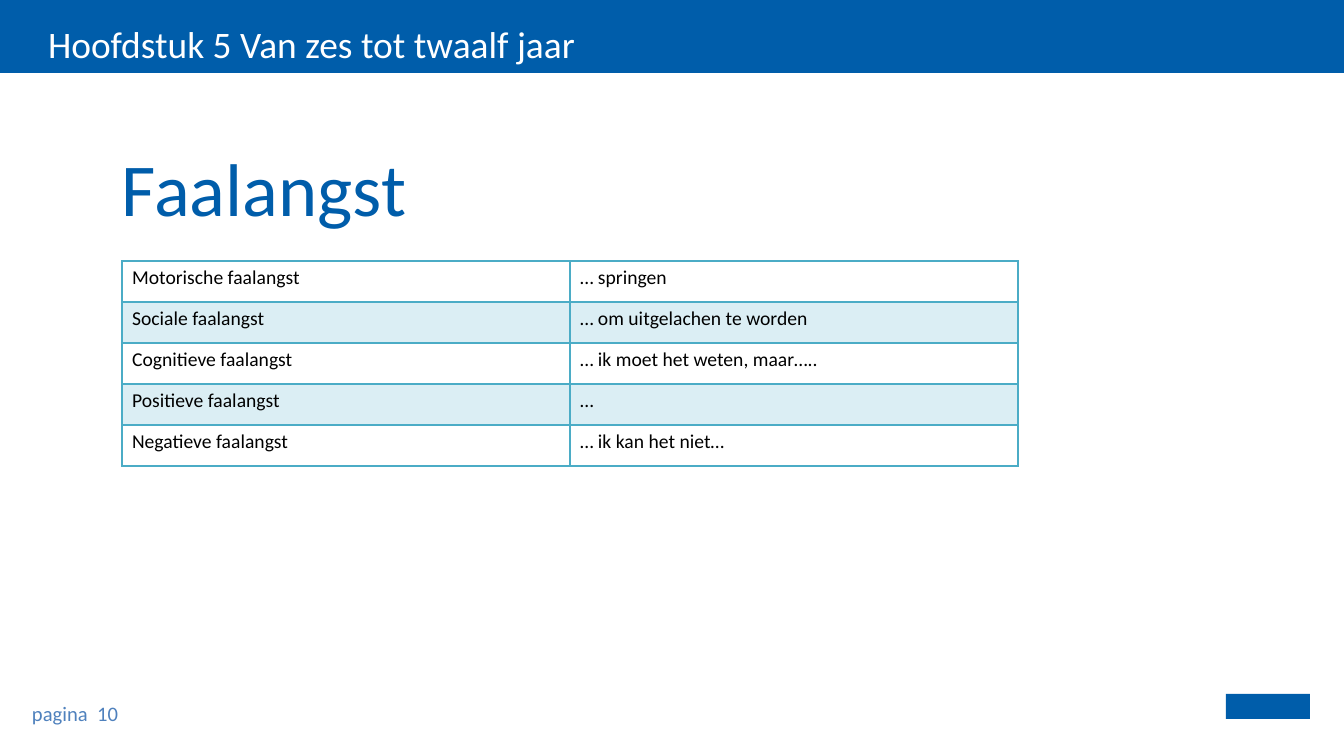
from lxml.etree import SubElement
from pptx import Presentation
from pptx.dml.color import RGBColor
from pptx.enum.shapes import MSO_SHAPE
from pptx.enum.text import MSO_ANCHOR, MSO_AUTO_SIZE, PP_ALIGN
from pptx.oxml.ns import qn
from pptx.util import Emu, Pt

BLUE = RGBColor(0x00, 0x5D, 0xAA)
PAGE_BLUE = RGBColor(0x4F, 0x81, 0xBD)
TEAL = RGBColor(0x4B, 0xAC, 0xC6)
PALE_TEAL = RGBColor(0xDB, 0xEE, 0xF4)
WHITE = RGBColor(0xFF, 0xFF, 0xFF)
BLACK = RGBColor(0x00, 0x00, 0x00)
FONT = "Calibri"

ANXIETY_TYPES = [
    ("Motorische faalangst", "… springen"),
    ("Sociale faalangst", "… om uitgelachen te worden"),
    ("Cognitieve faalangst", "… ik moet het weten, maar….."),
    ("Positieve faalangst", "…"),
    ("Negatieve faalangst", "… ik kan het niet…"),
]
COLUMN_WIDTH = 448
ROW_HEIGHT = 41


def px(length):
    return Emu(round(length * 914400 / 100.8))


def style_paragraph(para, size, color):
    para.alignment = PP_ALIGN.LEFT
    para.font.name = FONT
    para.font.size = Pt(size)
    para.font.color.rgb = color


def fill_text_box(box, text, size, color, anchor=MSO_ANCHOR.TOP, spacing=1.08):
    frame = box.text_frame
    frame.word_wrap = True
    frame.auto_size = MSO_AUTO_SIZE.NONE
    frame.vertical_anchor = anchor
    frame.margin_left = frame.margin_right = 0
    frame.margin_top = frame.margin_bottom = 0
    frame.text = text
    para = frame.paragraphs[0]
    para.line_spacing = spacing
    style_paragraph(para, size, color)


def add_text(page, left, top, width, height, *text_style, **layout):
    box = page.shapes.add_textbox(px(left), px(top), px(width), px(height))
    fill_text_box(box, *text_style, **layout)


def add_block(page, left, top, width, height):
    block = page.shapes.add_shape(
        MSO_SHAPE.RECTANGLE, px(left), px(top), px(width), px(height))
    block.shadow.inherit = False
    block.fill.solid()
    block.fill.fore_color.rgb = BLUE
    block.line.fill.background()


def add_title(page, left, top, width, height, text):
    title = page.shapes.title
    title.left, title.top = px(left), px(top)
    title.width, title.height = px(width), px(height)
    fill_text_box(title, text, 53.3, BLUE)


def set_borders(cell, widths):
    """Draw the left, right, top and bottom borders, with widths in points."""
    properties = cell._tc.get_or_add_tcPr()
    for side, width in zip("LRTB", widths):
        line = SubElement(properties, qn(f"a:ln{side}"), w=str(Pt(width)))
        solid = SubElement(line, qn("a:solidFill"))
        SubElement(solid, qn("a:srgbClr"), val=str(TEAL))


def add_anxiety_table(page, left, top):
    rows, columns = len(ANXIETY_TYPES), len(ANXIETY_TYPES[0])
    frame = page.shapes.add_table(
        rows, columns, px(left), px(top),
        px(columns * COLUMN_WIDTH), px(rows * ROW_HEIGHT))
    table = frame.table
    for column in table.columns:
        column.width = px(COLUMN_WIDTH)
    for index, texts in enumerate(ANXIETY_TYPES):
        table.rows[index].height = px(ROW_HEIGHT)
        top_width = 2 if index == 1 else 1
        bottom_width = 2 if index == 0 else 1
        for cell, text in zip(table.rows[index].cells, texts):
            set_borders(cell, (1, 1, top_width, bottom_width))
            cell.fill.solid()
            cell.fill.fore_color.rgb = PALE_TEAL if index % 2 else WHITE
            cell.text = text
            style_paragraph(cell.text_frame.paragraphs[0], 14, BLACK)


def main():
    deck = Presentation()
    deck.slide_width, deck.slide_height = px(1344), px(756)
    page = deck.slides.add_slide(deck.slide_layouts.get_by_name("Title Only"))

    add_block(page, 0, 0, 1344, 73)
    add_block(page, 1226, 694, 84, 25)
    add_text(page, 32, 693, 143, 40, "pagina  10", 14.7, PAGE_BLUE,
             anchor=MSO_ANCHOR.MIDDLE, spacing=1)
    add_text(page, 48, 18, 585, 52,
             "Hoofdstuk 5 Van zes tot twaalf jaar", 26.7, WHITE)
    add_title(page, 122, 135, 1143, 85, "Faalangst")
    add_anxiety_table(page, 122, 261)

    deck.save("out.pptx")


if __name__ == "__main__":
    main()
